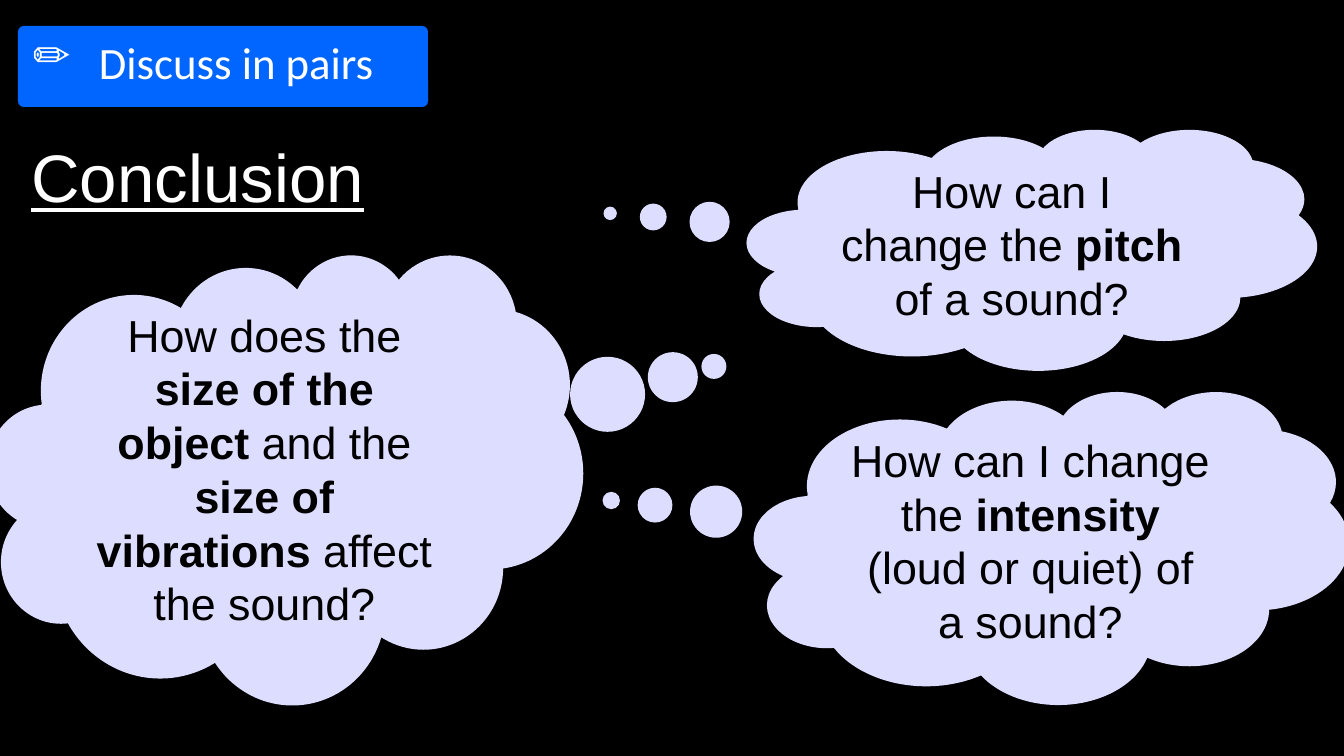
from lxml.etree import SubElement
from pptx import Presentation
from pptx.dml.color import RGBColor
from pptx.enum.shapes import MSO_SHAPE
from pptx.enum.text import MSO_ANCHOR, MSO_AUTO_SIZE, PP_ALIGN
from pptx.oxml.ns import qn
from pptx.util import Emu, Pt

SCALE = 914400 / 134.4  # EMU in one px


def px(n):
    return Emu(round(n * SCALE))


def color(code):
    return RGBColor.from_string(code)


def add_run(para, text, ink, **form):
    run = para.add_run()
    run.text = text
    for key, value in form.items():
        setattr(run.font, key, value)
    run.font.color.rgb = color(ink)


def add_form(slide, kind, box, fill, adjust):
    shape = slide.shapes.add_shape(kind, *map(px, box))
    shape.shadow.inherit = False
    shape.fill.solid()
    shape.fill.fore_color.rgb = color(fill)
    shape.line.fill.background()
    for i, value in enumerate(adjust):
        shape.adjustments[i] = value
    return shape


def add_title(slide, box, text):
    title = slide.shapes.title
    for key, value in zip(("left", "top", "width", "height"), box):
        setattr(title, key, px(value))
    frame = title.text_frame
    form = {"vertical_anchor": MSO_ANCHOR.TOP, "word_wrap": True,
            "auto_size": MSO_AUTO_SIZE.NONE}
    for key, value in form.items():
        setattr(frame, key, value)
    para = frame.paragraphs[0]
    para.alignment = PP_ALIGN.LEFT
    add_run(para, text, "FFFFFF", name="Arial", size=Pt(36), underline=True)


def add_cloud(slide, box, tail, parts):
    cloud = add_form(slide, MSO_SHAPE.CLOUD_CALLOUT, box, "DDDDFF", tail)
    frame = cloud.text_frame
    frame.word_wrap = True
    frame.vertical_anchor = MSO_ANCHOR.MIDDLE
    para = frame.paragraphs[0]
    para.alignment = PP_ALIGN.CENTER
    # Every second part is bold
    for i, part in enumerate(parts):
        add_run(para, part, "000000", name="Arial", size=Pt(24), bold=i % 2 == 1)


def add_badge(slide, box, mark, text):
    badge = add_form(slide, MSO_SHAPE.ROUNDED_RECTANGLE, box, "0066FF", [0.07])
    frame = badge.text_frame
    frame.word_wrap = True
    frame.vertical_anchor = MSO_ANCHOR.TOP
    para = frame.paragraphs[0]
    para.alignment = PP_ALIGN.LEFT
    # Pencil bullet with a hanging indent
    props = para._p.get_or_add_pPr()
    props.set("marL", str(px(66)))
    props.set("indent", str(px(-66)))
    SubElement(props, qn("a:buChar")).set("char", mark)
    add_run(para, text, "FFFFFF", name="Calibri", size=Pt(24))


def main():
    deck = Presentation()
    deck.slide_width, deck.slide_height = px(1344), px(756)
    slide = deck.slides.add_slide(deck.slide_layouts[5])
    slide.background.fill.solid()
    slide.background.fill.fore_color.rgb = color("000000")

    add_title(slide, (18, 129, 1102, 95), "Conclusion")

    # Thought clouds: box, tail, text parts
    left, right = (-0.74, -0.15), (0.72, -0.25)
    clouds = [
        ((747, 129, 570, 241), left,
         ("How can I change the ", "pitch", " of a sound?")),
        ((754, 391, 595, 313), left,
         ("How can I change the ", "intensity", " (loud or quiet) of a sound?")),
        ((-12, 254, 595, 450), right,
         ("How does the ", "size of the object ", "and the ",
          "size of vibrations ", "affect the sound?")),
    ]
    for cloud in clouds:
        add_cloud(slide, *cloud)

    add_badge(slide, (18, 26, 410, 81), "✏", "Discuss in pairs")
    deck.save("out.pptx")


if __name__ == "__main__":
    main()
